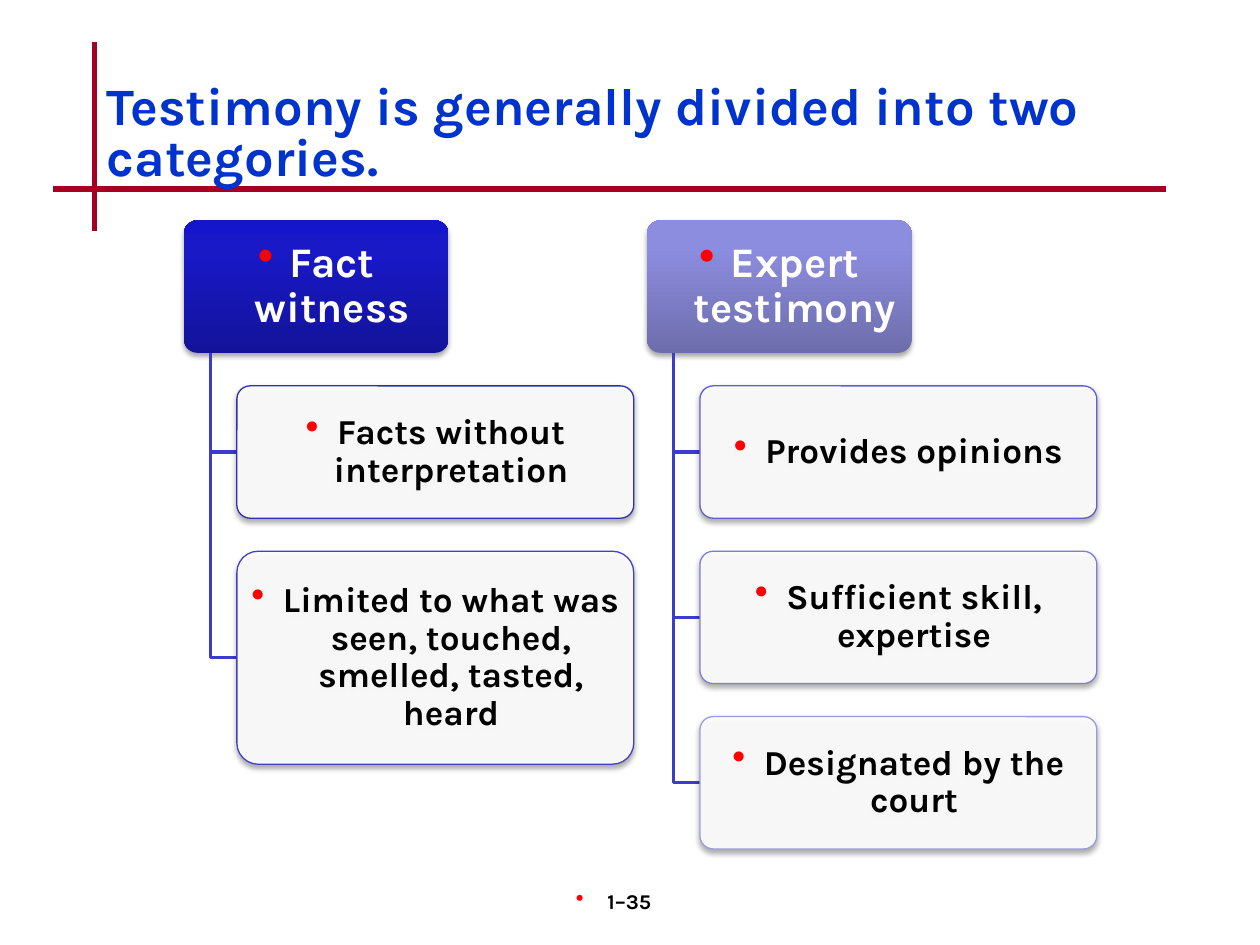
from lxml.etree import SubElement as Sub
from pptx import Presentation
from pptx.dml.color import RGBColor
from pptx.enum.shapes import MSO_CONNECTOR as Link, MSO_SHAPE as Kind
from pptx.enum.text import MSO_ANCHOR as Anchor, PP_ALIGN as Align
from pptx.oxml.ns import qn
from pptx.util import Inches, Pt

FONT = "Karla"
HUE = {"rule": "A50021", "title": "0033CC", "tree": "3B3BCD", "dot": "FF0000",
       "dark": "000000", "light": "FFFFFF"}
TITLE = "Testimony is generally divided into two categories."
PAGE = "1–35"
RULES = [(0.75, 0.33, 0.75, 1.83), (0.42, 1.5, 9.25, 1.5)]

# Each branch: heading, gradient stops, then (text, line colour, height in rows)
TREE = [
    ("Fact witness", [(0, "13139A"), (80, "1919C8"), (100, "1515CC")], [
        ("Facts without interpretation", "2E2EB9", 1),
        ("Limited to what was seen, touched, smelled, tasted, heard", "4141CB", 1.61),
    ]),
    ("Expert testimony", [(0, "6D6DAC"), (80, "8D8DE0"), (100, "8C8CE2")], [
        ("Provides opinions", "6060D0", 1),
        ("Sufficient skill, expertise", "7E7ED6", 1),
        ("Designated by the court", "9C9CDD", 1),
    ]),
]

LEFT, TOP = 1.46, 1.75
WIDE = 2.1
ROW = WIDE / 2
GAP = ROW / 4
STEP = WIDE * 1.75
STEM = WIDE / 10


def rgb(name):
    return RGBColor.from_string(HUE.get(name, name))


def add(node, tag, **attrs):
    return Sub(node, qn("a:" + tag), {k: str(v) for k, v in attrs.items()})


def paint(node, color, alpha=None):
    tint = add(node, "srgbClr", val=color)
    if alpha:
        add(tint, "alpha", val=alpha * 1000)


def bullet(para):
    """Give the paragraph a red dot with a hanging indent."""
    props = para._p.get_or_add_pPr()
    props.set("marL", str(Inches(0.25)))
    props.set("indent", str(-Inches(0.25)))
    paint(add(props, "buClr"), HUE["dot"])
    add(props, "buSzPct", val=110000)
    add(props, "buChar", char="•")


def write(shape, text, size, color, align=Align.CENTER, space=None,
          pad=(0.1, 0.05, 0.1, 0.05), anchor=Anchor.MIDDLE, dot=True):
    frame = shape.text_frame
    frame.word_wrap = True
    frame.vertical_anchor = anchor
    (frame.margin_left, frame.margin_top,
     frame.margin_right, frame.margin_bottom) = map(Inches, pad)
    para = frame.paragraphs[0]
    para.alignment = align
    if space:
        para.line_spacing = space
    if dot:
        bullet(para)
    run = para.add_run()
    run.text = text
    font = run.font
    font.name, font.size, font.bold = FONT, Pt(size), True
    font.color.rgb = rgb(color)


def card(left, top, wide, high):
    """Add a rounded box with a soft shadow, with its fill yet to be set."""
    shape = slide.shapes.add_shape(
        Kind.ROUNDED_RECTANGLE, *map(Inches, (left, top, wide, high)))
    shape.adjustments[0] = 0.1
    shape.shadow.inherit = False
    glow = add(shape._element.spPr.find(qn("a:effectLst")), "outerShdw",
               blurRad=Pt(3.1), dist=Pt(1.8), dir=5400000, rotWithShape=0)
    paint(glow, HUE["dark"], 35)
    return shape


def head(left, text, stops):
    shape = card(left, TOP, WIDE, ROW)
    shape.line.fill.background()
    shape.fill.gradient()
    shape.fill.gradient_angle = 270
    grad = shape._element.spPr.find(qn("a:gradFill"))
    shade = grad.find(qn("a:gsLst"))
    for old in list(shade):
        shade.remove(old)
    for pos, color in stops:
        paint(add(shade, "gs", pos=pos * 1000), color)
    grad.find(qn("a:lin")).set("ang", "16200000")
    write(shape, text, 24, "light", space=0.9, pad=(0.05, 0.03, 0.05, 0.03))


def leaf(left, top, high, text, color):
    shape = card(left, top, WIDE * 1.5, high)
    shape.fill.solid()
    shape.fill.fore_color.rgb = rgb("light")
    tint = shape._element.spPr.find(qn("a:solidFill"))[0]
    add(tint, "alpha", val=90000)
    shape.line.color.rgb = rgb(color)
    shape.line.width = Pt(0.75)
    write(shape, text, 20, "dark", space=0.9, pad=(0.04, 0.03, 0.04, 0.03))


def elbow(left, top, end):
    """Draw the bent line from a heading down to the middle of a leaf."""
    pen = slide.shapes.build_freeform(Inches(left), Inches(top))
    pen.add_line_segments([(Inches(left), Inches(end)),
                           (Inches(left + STEM), Inches(end))], close=False)
    shape = pen.convert_to_shape()
    shape.shadow.inherit = False
    shape.fill.background()
    shape.line.color.rgb = rgb("tree")
    shape.line.width = Pt(2)


def rule(ends):
    line = slide.shapes.add_connector(Link.STRAIGHT, *map(Inches, ends))
    line.line.color.rgb = rgb("rule")
    line.line.width = Pt(3)
    add(line._element.spPr, "effectLst")


def box(*place):
    return slide.shapes.add_textbox(*map(Inches, place))


deck = Presentation()
deck.slide_width, deck.slide_height = Inches(10), Inches(7.5)
slide = deck.slides.add_slide(deck.slide_layouts[6])

for ends in RULES:
    rule(ends)
write(box(3.92, 7, 2.08, 0.5), PAGE, 12, "dark",
      pad=(0.1, 0.05, 0.28, 0.05), anchor=Anchor.TOP)
write(box(0.75, 0.58, 8.5, 1), TITLE, 30, "title", Align.LEFT, 0.8, dot=False)

for col, (name, stops, leaves) in enumerate(TREE):
    left = LEFT + col * STEP
    head(left, name, stops)
    top = TOP + ROW + GAP
    for text, color, rows in leaves:
        high = rows * ROW
        elbow(left + STEM, TOP + ROW, top + high / 2)
        leaf(left + 2 * STEM, top, high, text, color)
        top += high + GAP

deck.save("out.pptx")
